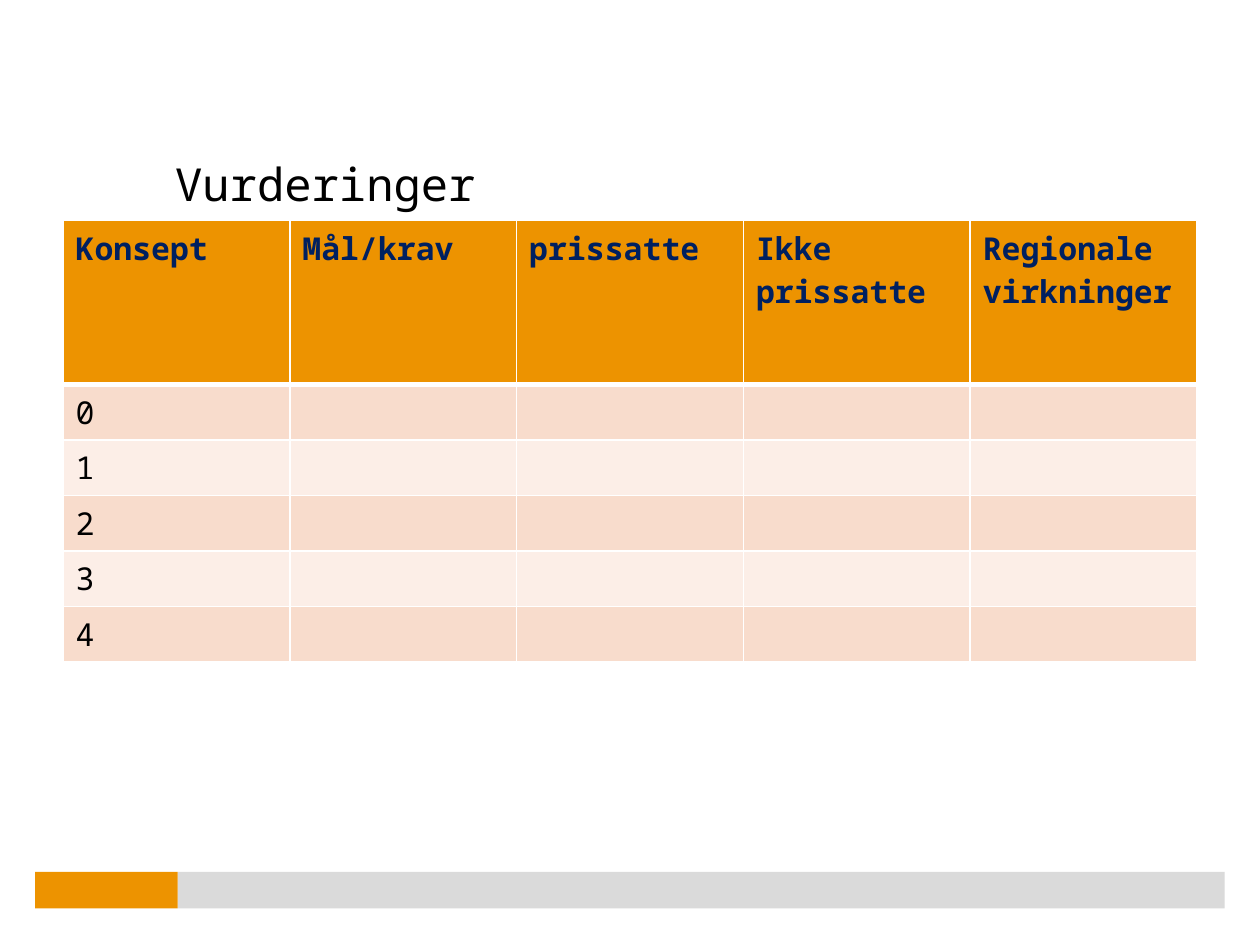
from lxml.etree import SubElement
from pptx import Presentation
from pptx.dml.color import RGBColor
from pptx.enum.shapes import MSO_SHAPE
from pptx.enum.text import MSO_ANCHOR, PP_ALIGN
from pptx.oxml.ns import qn
from pptx.util import Inches, Pt

ORANGE, GREY, WHITE = "ED9300", "DADADA", "FFFFFF"
BANDS = ["F8DCCC", "FCEEE7"]
HEADS = ["Konsept", "Mål/krav", "prissatte", "Ikke prissatte", "Regionale virkninger"]
ROWS = [HEADS] + [[str(n)] + [""] * 4 for n in range(5)]


def paint(part, hue):
    """Give a fill or a font a solid colour."""
    if hasattr(part, "solid"):
        part.solid()
        part.fore_color.rgb = RGBColor.from_string(hue)
    else:
        part.color.rgb = RGBColor.from_string(hue)


def style(para, hue, **form):
    paint(para.font, hue)
    for key, value in {"name": "Noto Sans Mono", **form}.items():
        setattr(para.font, key, value)


deck = Presentation()
deck.slide_width, deck.slide_height = Inches(10), Inches(7.5)
slide = deck.slides.add_slide(deck.slide_layouts[5])

# Footer band
for left, width, hue in [(1.41, 8.31, GREY), (0.28, 1.13, ORANGE)]:
    bar = slide.shapes.add_shape(
        MSO_SHAPE.RECTANGLE, Inches(left), Inches(6.92), Inches(width), Inches(0.29))
    bar.shadow.inherit = False
    paint(bar.fill, hue)
    bar.line.fill.background()

# Title
title = slide.shapes.title
place = {"left": 1.39, "top": 1.16, "width": 7.65, "height": 0.51}
for key, value in place.items():
    setattr(title, key, Inches(value))
frame = title.text_frame
for side in ["left", "top", "right", "bottom"]:
    setattr(frame, "margin_" + side, 0)
frame.vertical_anchor = MSO_ANCHOR.BOTTOM
frame.text = "Vurderinger"
frame.paragraphs[0].alignment = PP_ALIGN.LEFT
style(frame.paragraphs[0], "000000", size=Pt(26))

# Table
table = slide.shapes.add_table(
    len(ROWS), len(HEADS), Inches(0.5), Inches(1.75), Inches(9), Inches(3.5)).table
for r, row in enumerate(ROWS):
    head = r == 0
    table.rows[r].height = Inches(1.3 if head else 0.44)
    for c, text in enumerate(row):
        cell = table.cell(r, c)
        cell.text = text
        style(cell.text_frame.paragraphs[0], "002060" if head else "000000",
              size=Pt(18), bold=head)
        props = cell._tc.get_or_add_tcPr()
        for side in "LRTB":
            thick = (r, side) in [(0, "B"), (1, "T")]
            line = SubElement(props, qn("a:ln" + side), w=str(Pt(3 if thick else 1)))
            SubElement(SubElement(line, qn("a:solidFill")), qn("a:srgbClr"), val=WHITE)
        paint(cell.fill, ORANGE if head else BANDS[(r - 1) % 2])

deck.save("out.pptx")
